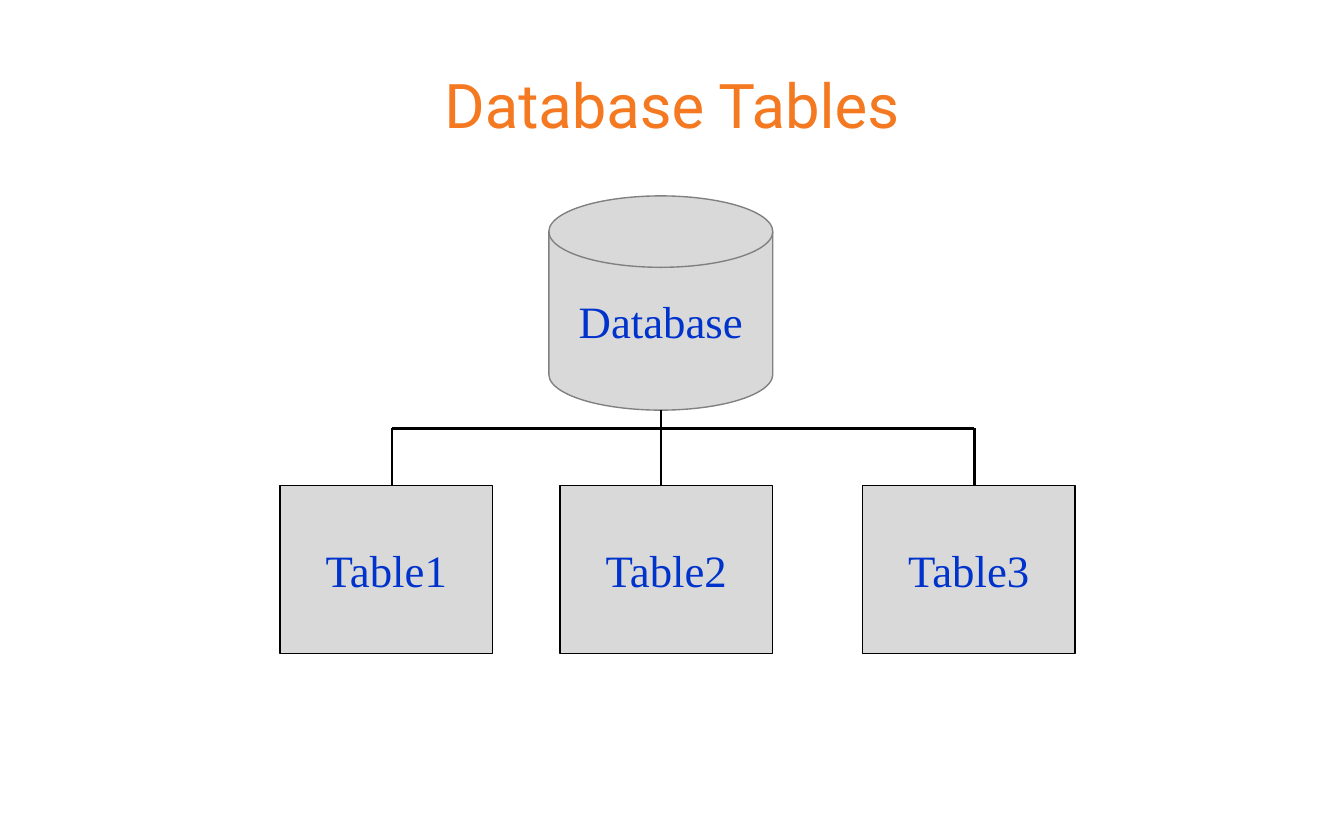
from lxml.etree import SubElement
from pptx import Presentation
from pptx.dml.color import RGBColor
from pptx.enum.shapes import MSO_CONNECTOR as Connector, MSO_SHAPE as Shape
from pptx.enum.text import MSO_ANCHOR as Anchor, MSO_AUTO_SIZE as AutoSize, PP_ALIGN as Align
from pptx.oxml.ns import qn
from pptx.util import Emu, Pt

PX = 9525
ORANGE, BLUE, BLACK = "F47920", "0033CC", "000000"
LIGHT_GREY, GREY = "D9D9D9", "808080"


def px(*lengths):
    """Turn whole px into EMU."""
    return [Emu(length * PX) for length in lengths]


def color(hex_string):
    """Give the colour for a hex string."""
    return RGBColor.from_string(hex_string)


def write(frame, text, size, font, ink):
    """Write one centred line of text in a frame."""
    frame.vertical_anchor = Anchor.MIDDLE
    para = frame.paragraphs[0]
    para.alignment = Align.CENTER
    span = para.add_run()
    span.text = text
    span.font.size = Pt(size)
    span.font.name = font
    span.font.color.rgb = color(ink)


def trim_template(layout, height):
    """Remove the template's footers that fall below the slide."""
    for sheet in (layout, layout.slide_master):
        for box in list(sheet.placeholders):
            if box.top >= height:
                box._element.getparent().remove(box._element)


def add_title(page, left, top, width, height):
    """Place the slide title in its box."""
    title = page.shapes.title
    title.left, title.top, title.width, title.height = px(left, top, width, height)
    title.text_frame.auto_size = AutoSize.NONE
    write(title.text_frame, "Database Tables", 33, "Roboto", ORANGE)


def add_node(group, kind, text, outline, left, top, width, height):
    """Add a labelled grey shape to the diagram."""
    node = group.shapes.add_shape(kind, *px(left, top, width, height))
    node.shadow.inherit = False
    node.fill.solid()
    node.fill.fore_color.rgb = color(LIGHT_GREY)
    node.line.color.rgb = color(outline)
    node.line.width = Pt(0.75)
    node.text_frame.word_wrap = False
    write(node.text_frame, text, 24, "Times New Roman", BLUE)


def add_line(group, *ends):
    """Add a straight black line between two points."""
    line = group.shapes.add_connector(Connector.STRAIGHT, *px(*ends))
    line.line.color.rgb = color(BLACK)
    line.line.width = Pt(1.25)
    SubElement(line._element.spPr, qn("a:effectLst"))


def add_diagram(page, left, top, width, height):
    """Draw the database above its tables, joined by a bus line."""
    group = page.shapes.add_group_shape()
    table_width, table_height, disk_height = 152, 120, 153
    table_top = top + height - table_height
    disk_bottom, bus = top + disk_height, table_top - 41
    trunk = left + 272
    add_node(group, Shape.FLOWCHART_MAGNETIC_DISK, "Database", GREY,
             trunk - 80, top, 160, disk_height)
    table_lefts = (left, left + 200, left + width - table_width)
    for number, table_left in enumerate(table_lefts, 1):
        add_node(group, Shape.RECTANGLE, f"Table{number}", BLACK,
                 table_left, table_top, table_width, table_height)
    add_line(group, trunk, table_top, trunk, disk_bottom)
    for branch in (left + 80, left + 496):
        add_line(group, branch, table_top, branch, bus)
        add_line(group, branch, bus, trunk, bus)


def main():
    """Build and save the deck."""
    deck = Presentation()
    deck.slide_width, deck.slide_height = px(960, 600)
    layout = deck.slide_layouts.get_by_name("Title Only")
    trim_template(layout, deck.slide_height)
    page = deck.slides.add_slide(layout)
    add_title(page, 48, 24, 864, 100)
    add_diagram(page, 200, 140, 568, 327)
    deck.save("out.pptx")


if __name__ == "__main__":
    main()
